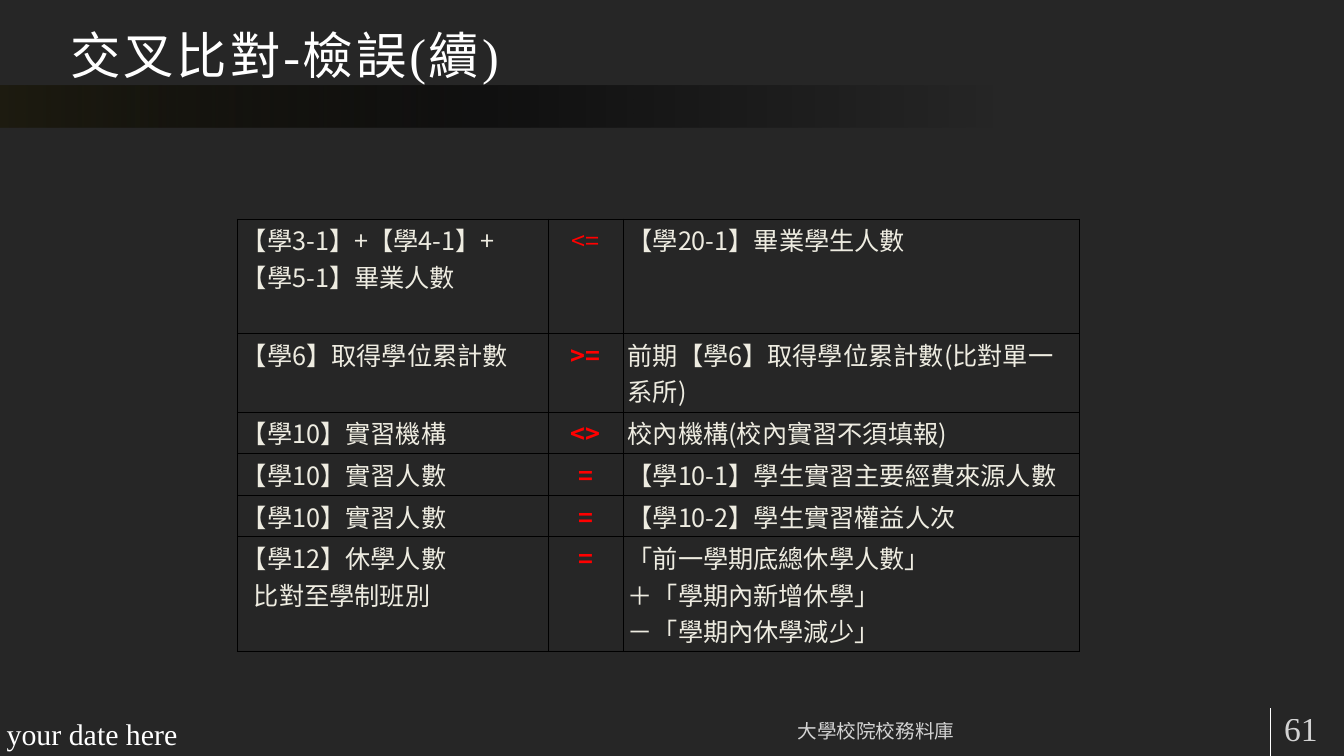
from dataclasses import dataclass

import lxml.etree
import pptx
import pptx.dml.color
import pptx.enum.shapes
import pptx.enum.text
import pptx.oxml
import pptx.oxml.ns
import pptx.util

Align = pptx.enum.text.PP_ALIGN
Anchor = pptx.enum.text.MSO_ANCHOR
qn = pptx.oxml.ns.qn

GRID_COLUMNS, GRID_ROWS = 20, 11.25
UNIT = pptx.util.Inches(1)  # side of one square grid cell


@dataclass(frozen=True)
class Theme:
    background: str = "262626"
    band: str = "1E1C11"
    black: str = "000000"
    white: str = "FFFFFF"
    body: str = "EEECE1"
    operator: str = "FF0000"
    heading_font: str = "Times New Roman"
    table_font: str = "Noto Sans CJK SC"
    title_size: float = 54
    number_size: float = 36
    date_size: float = 32
    table_size: float = 27
    footer_size: float = 21


THEME = Theme()


@dataclass(frozen=True)
class Label:
    """A text box placed in grid columns and rows."""
    text: str
    column: float
    row: float
    columns: float
    rows: float
    size: float
    anchor: Anchor = Anchor.TOP
    align: Align = Align.LEFT
    inset: tuple[float, float] = (0.18, 0.09)
    opacity: int = 100
    tracking: float = 0


@dataclass(frozen=True)
class Check:
    """One comparison: left lines, operator, right lines."""
    left: tuple[str, ...]
    operator: str
    right: tuple[str, ...]
    height: float
    bold: bool = True


LABELS = [
    Label("交叉比對-檢誤(續)", 0.87, 0, 18, 1.35, THEME.title_size, Anchor.BOTTOM, tracking=3),
    Label("大學校院校務料庫", 7.17, 10.54, 11.73, 0.6, THEME.footer_size,
          Anchor.BOTTOM, Align.CENTER, opacity=80),
    Label("61", 18.93, 10.54, 1.15, 0.6, THEME.number_size, Anchor.MIDDLE, opacity=80),
    Label("your date here", 0, 10.6, 4.5, 0.46, THEME.date_size, inset=(0.1, 0.05)),
]

CHECKS = [
    Check(("【學3-1】+【學4-1】+【學5-1】畢業人數",), "<=", ("【學20-1】畢業學生人數",), 1.7, bold=False),
    Check(("【學6】取得學位累計數",), ">=", ("前期【學6】取得學位累計數(比對單一系所)",), 1.17),
    Check(("【學10】實習機構",), "<>", ("校內機構(校內實習不須填報)",), 0.62),
    Check(("【學10】實習人數",), "=", ("【學10-1】學生實習主要經費來源人數",), 0.62),
    Check(("【學10】實習人數",), "=", ("【學10-2】學生實習權益人次",), 0.62),
    Check(("【學12】休學人數", "比對至學制班別"), "=",
          ("「前一學期底總休學人數」", "＋「學期內新增休學」", "－「學期內休學減少」"), 1.7),
]
TABLE_COLUMNS = (4.63, 1.11, 6.8)
SUBLINE_INDENT = 0.18


def grid(cells: float) -> int:
    return round(cells * UNIT)


def rgb(color: str) -> pptx.dml.color.RGBColor:
    return pptx.dml.color.RGBColor.from_string(color)


def set_opacity(parent, percent: int) -> None:
    """Make the solid colour inside an XML element translucent."""
    color = parent.find(".//" + qn("a:srgbClr"))
    lxml.etree.SubElement(color, qn("a:alpha"), val=str(percent * 1000))


def style_font(paragraph, name: str, size: float, color: str) -> None:
    font = paragraph.font
    font.name, font.size = name, pptx.util.Pt(size)
    font.color.rgb = rgb(color)


def set_insets(holder, horizontal: float, vertical: float) -> None:
    holder.margin_left = holder.margin_right = grid(horizontal)
    holder.margin_top = holder.margin_bottom = grid(vertical)


def add_label(slide, label: Label) -> None:
    shape = slide.shapes.add_textbox(*map(grid, (label.column, label.row, label.columns, label.rows)))
    frame = shape.text_frame
    frame.word_wrap = True
    frame.vertical_anchor = label.anchor
    set_insets(frame, *label.inset)
    paragraph = frame.paragraphs[0]
    paragraph.alignment = label.align
    run = paragraph.add_run()
    run.text = label.text
    style_font(run, THEME.heading_font, label.size, THEME.white)
    properties = run.font._element
    if label.opacity < 100:
        set_opacity(properties, label.opacity)
    if label.tracking:
        properties.set("spc", str(round(label.tracking * 100)))


def add_band(slide) -> None:
    """Draw the strip under the title, fading out to the right."""
    band = slide.shapes.add_shape(pptx.enum.shapes.MSO_SHAPE.RECTANGLE,
                                  0, grid(1.27), grid(GRID_COLUMNS), grid(0.63))
    band.shadow.inherit = False
    band.line.fill.background()
    band.fill.gradient()
    band.fill.gradient_angle = 0
    stops = band._element.spPr.find(".//" + qn("a:gsLst"))
    for stop in list(stops):
        stops.remove(stop)
    for position, color, opacity in ((0, THEME.band, 100), (39, THEME.black, 54), (74, THEME.black, 0)):
        stop = lxml.etree.SubElement(stops, qn("a:gs"), pos=str(position * 1000))
        lxml.etree.SubElement(stop, qn("a:srgbClr"), val=color)
        set_opacity(stop, opacity)


def add_number_rule(slide) -> None:
    rule = slide.shapes.add_connector(pptx.enum.shapes.MSO_CONNECTOR.STRAIGHT,
                                      grid(18.9), grid(10.54), grid(18.9), grid(GRID_ROWS))
    rule.line.color.rgb = rgb(THEME.white)
    rule.line.width = pptx.util.Pt(0.75)
    lxml.etree.SubElement(rule._element.spPr, qn("a:effectLst"))


def add_borders(cell) -> None:
    properties = cell._tc.get_or_add_tcPr()
    for side in ("a:lnL", "a:lnR", "a:lnT", "a:lnB"):
        line = lxml.etree.SubElement(properties, qn(side), w=str(pptx.util.Pt(1)))
        fill = lxml.etree.SubElement(line, qn("a:solidFill"))
        lxml.etree.SubElement(fill, qn("a:srgbClr"), val=THEME.black)


def fill_cell(cell, lines: tuple[str, ...], color: str, align: Align, bold: bool) -> None:
    add_borders(cell)
    cell.fill.background()
    set_insets(cell, 0.07, 0.04)
    cell.text_frame.text = "\n".join(lines)
    for paragraph in cell.text_frame.paragraphs:
        paragraph.alignment = align
        style_font(paragraph, THEME.table_font, THEME.table_size, color)
        paragraph.font.bold = bold


def add_check_table(slide, checks: list[Check]) -> None:
    height = sum(check.height for check in checks)
    frame = slide.shapes.add_table(len(checks), len(TABLE_COLUMNS), grid(3.53), grid(3.26),
                                   grid(sum(TABLE_COLUMNS)), grid(height))
    table = frame.table
    table.first_row = table.horz_banding = False
    for column, width in zip(table.columns, TABLE_COLUMNS):
        column.width = grid(width)
    for row, check in zip(table.rows, checks):
        row.height = grid(check.height)
        left, operator, right = row.cells
        fill_cell(left, check.left, THEME.body, Align.LEFT, False)
        fill_cell(operator, (check.operator,), THEME.operator, Align.CENTER, check.bold)
        fill_cell(right, check.right, THEME.body, Align.LEFT, False)
        for paragraph in left.text_frame.paragraphs[1:]:
            paragraph._p.get_or_add_pPr().set("marL", str(grid(SUBLINE_INDENT)))


def main() -> None:
    presentation = pptx.Presentation()
    presentation.slide_width, presentation.slide_height = grid(GRID_COLUMNS), grid(GRID_ROWS)
    slide = presentation.slides.add_slide(presentation.slide_layouts[6])
    slide.background.fill.solid()
    slide.background.fill.fore_color.rgb = rgb(THEME.background)
    add_band(slide)
    add_number_rule(slide)
    for label in LABELS:
        add_label(slide, label)
    add_check_table(slide, CHECKS)
    presentation.save("out.pptx")


if __name__ == "__main__":
    main()
